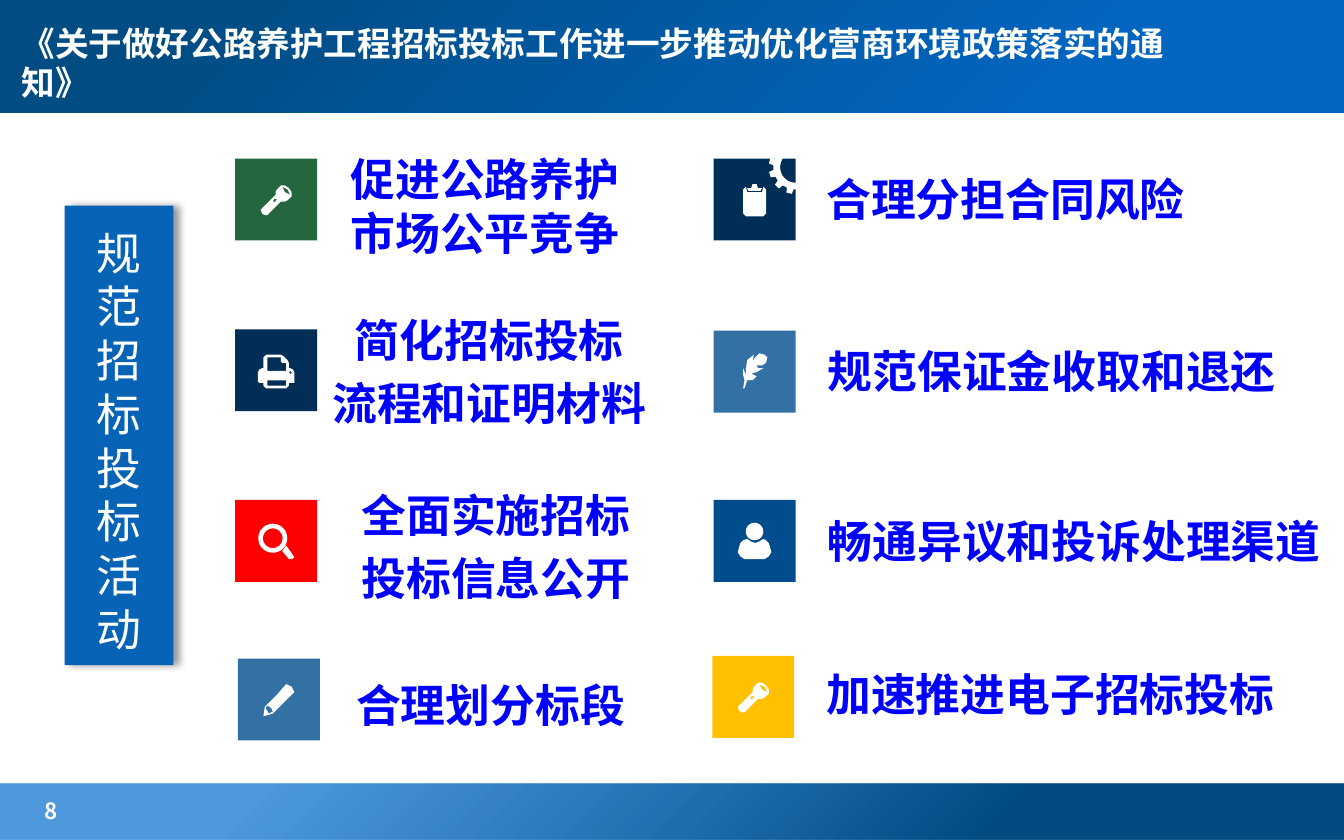
"""Build the slide on standardising tendering for road maintenance works."""
from math import cos, pi, sin

from lxml import etree
from pptx import Presentation
from pptx.dml.color import RGBColor
from pptx.enum.shapes import MSO_SHAPE
from pptx.enum.text import MSO_ANCHOR, PP_ALIGN
from pptx.oxml import parse_xml
from pptx.oxml.ns import qn
from pptx.util import Inches, Pt

RECT = MSO_SHAPE.RECTANGLE
LEFT, CENTER = PP_ALIGN.LEFT, PP_ALIGN.CENTER
TOP, MIDDLE = MSO_ANCHOR.TOP, MSO_ANCHOR.MIDDLE
NS = 'xmlns:a="http://schemas.openxmlformats.org/drawingml/2006/main"'
CJK = "Noto Sans CJK SC"


def paint(sp, color):
    sp.shadow.inherit = False
    sp.line.fill.background()
    sp.fill.solid()
    sp.fill.fore_color.rgb = RGBColor.from_string(color)


def write(sp, lines, size, font, color, bold=True, align=LEFT, anchor=TOP, pitch=None, inset=0.05):
    tf = sp.text_frame
    tf.word_wrap = True
    tf.vertical_anchor = anchor
    tf.margin_left = tf.margin_right = Inches(0.1)
    tf.margin_top, tf.margin_bottom = Inches(inset), Inches(0.05)
    for i, line in enumerate(lines):
        p = tf.add_paragraph() if i else tf.paragraphs[0]
        p.alignment = align
        p.space_before = Pt(size * 0.2 if i else 0)
        if pitch:
            p.line_spacing = Pt(pitch)
        r = p.add_run()
        r.text = line
        r.font.size, r.font.bold, r.font.name = Pt(size), bold, font
        r.font.color.rgb = RGBColor.from_string(color)
        etree.SubElement(r.font._element, qn("a:ea"), typeface=CJK)


prs = Presentation()
prs.slide_width, prs.slide_height = Inches(10), Inches(6.25)
s = prs.slides.add_slide(prs.slide_layouts[5])

bars = [
    (5.83, 0.42, [(26, "014C83", 100), (80, "026DCE", 70)]),
    (-0.03, 0.87, [(21, "0265BF", 100), (86, "014C83", 100)]),
]
for y, h, stops in bars:
    sp = s.shapes.add_shape(RECT, 0, Inches(y), prs.slide_width, Inches(h))
    paint(sp, stops[0][1])
    gs = "".join(
        f'<a:gs pos="{pos}000"><a:srgbClr val="{color}"><a:alpha val="{alpha}000"/></a:srgbClr></a:gs>'
        for pos, color, alpha in stops
    )
    solid = sp._element.spPr.find(qn("a:solidFill"))
    solid.getparent().replace(solid, parse_xml(
        f'<a:gradFill {NS} rotWithShape="1"><a:gsLst>{gs}</a:gsLst><a:path path="circle">'
        '<a:fillToRect l="100000" t="100000"/></a:path></a:gradFill>'
    ))

title = s.shapes.title
title._element.getparent().append(title._element)
title.left, title.top, title.width, title.height = Inches(0.06), Inches(0.12), Inches(9.17), Inches(0.64)
write(title, ["《关于做好公路养护工程招标投标工作进一步推动优化营商环境政策落实的通知》"], 18,
      "Times New Roman", "FFFFFF", anchor=MIDDLE, pitch=21, inset=0.11)

number = s.shapes.add_textbox(Inches(0.23), Inches(5.91), Inches(1.54), Inches(0.26))
write(number, ["8"], 12, CJK, "FFFFFF", inset=0.02)

label = s.shapes.add_shape(RECT, Inches(0.48), Inches(1.53), Inches(0.81), Inches(3.42))
paint(label, "0763B6")
label._element.spPr.find(qn("a:effectLst")).append(parse_xml(
    f'<a:outerShdw {NS} blurRad="50800" dist="38100" dir="0" algn="l" rotWithShape="0">'
    '<a:srgbClr val="000000"><a:alpha val="40000"/></a:srgbClr></a:outerShdw>'
))
write(label, ["规范招标投标活动"], 24, CJK, "FFFFFF", False, CENTER, MIDDLE, 28.8, 0.12)

# Icon outlines are in hundredths of an inch from the corner of their tile.
circle = [(cos(k * pi / 18), sin(k * pi / 18)) for k in range(36)]
ring = [[(28 + r * x, 28.5 + r * y) for x, y in circle] for r in (10.8, 7.3)]
head = [(30.5 + 6.5 * x, 23.5 + 6.5 * y) for x, y in circle]
gear_hole = [(61 + 11.5 * x, 6.5 + 11.5 * y) for x, y in circle]
gear_teeth = [
    (61 + r * cos((14 + 30 * k + turn) * pi / 180), 6.5 + r * sin((14 + 30 * k + turn) * pi / 180))
    for k in range(12) for turn, r in ((-9, 16.5), (-6, 20), (6, 20), (9, 16.5))
]
torch = [[
    [(40, 22), (37, 20), (34, 20), (31, 23), (30, 25), (30, 27), (19, 38), (20, 41), (22, 42),
     (24, 42), (34, 32), (37, 32), (39, 31), (42, 28), (42, 25)],
    [(37, 25), (35, 21), (39, 23), (41, 27)],
    [(28, 32), (29, 30), (31, 30), (30, 32)],
]]
printer = [[
    [(43, 30), (41, 29), (40, 29), (40, 25), (39, 23), (36, 20), (34, 19), (23, 19), (21, 21),
     (21, 29), (20, 29), (18, 30), (17, 32), (17, 39), (18, 40), (21, 40), (21, 42), (23, 44),
     (38, 44), (40, 42), (40, 40), (44, 40), (44, 32)],
    [(38, 31), (24, 31), (24, 21), (34, 21), (34, 24), (35, 25), (38, 25)],
    [(38, 42), (24, 42), (24, 38), (38, 38)],
    [(42, 33), (41, 33), (40, 32), (41, 31), (42, 32)],
]]
magnifier = [ring + [[(35, 38), (40, 44), (42, 44), (44, 43), (43, 41), (38, 34)]]]
pencil = [[
    [(40, 21), (36, 19), (29, 27), (20, 36), (19, 43), (26, 41), (34, 33), (42, 25)],
    [(25, 40), (23, 41), (22, 39), (21, 38), (21, 36), (22, 35), (25, 37), (26, 40)],
]]
clipboard = [
    [[(37, 21), (36, 25), (25, 25), (24, 21), (22, 23), (22, 41), (24, 43), (37, 43), (39, 41), (39, 23)]],
    [[(35, 24), (36, 22), (33, 22), (32, 19), (29, 19), (28, 22), (25, 22), (26, 24)]],
    [gear_teeth, gear_hole],
]
feather = [[
    [(23, 43), (25, 37), (29, 37), (32, 34), (28, 32), (32, 31), (37, 28), (33, 28), (32, 26),
     (36, 26), (39, 24), (40, 20), (38, 18), (34, 17), (31, 20), (29, 23), (30, 18), (25, 22),
     (24, 29), (24, 33), (22, 28), (22, 33), (23, 37), (22, 43)],
]]
person = [
    [head],
    [[(42, 35), (41, 32), (39, 30), (37, 29), (34, 31), (31, 32), (28, 31), (25, 29), (22, 30),
      (20, 32), (19, 35), (18, 39), (20, 42), (23, 44), (38, 44), (41, 42), (43, 39)]],
]

items = [
    (1.75, 1.18, "24673E", torch, 2.51, 1.05, 2.36, LEFT, ["促进公路养护市场公平竞争"]),
    (1.75, 2.45, "012E57", printer, 2.28, 2.25, 2.72, CENTER, ["简化招标投标", "流程和证明材料"]),
    (1.75, 3.72, "FF0000", magnifier, 2.33, 3.55, 2.72, CENTER, ["全面实施招标", "投标信息公开"]),
    (1.77, 4.9, "3371A4", pencil, 2.29, 4.96, 2.72, CENTER, ["合理划分标段"]),
    (5.31, 1.18, "012E57", clipboard, 6.05, 1.2, 3.15, LEFT, ["合理分担合同风险"]),
    (5.31, 2.46, "3371A4", feather, 6.06, 2.48, 3.74, LEFT, ["规范保证金收取和退还"]),
    (5.31, 3.72, "014C8D", person, 6.06, 3.74, 3.94, LEFT, ["畅通异议和投诉处理渠道"]),
    (5.3, 4.88, "FFC000", torch, 6.05, 4.88, 3.94, LEFT, ["加速推进电子招标投标"]),
]
for x, y, color, icon, text_x, text_y, text_w, align, lines in items:
    tile = s.shapes.add_shape(RECT, Inches(x), Inches(y), Inches(0.61), Inches(0.61))
    paint(tile, color)
    for outline in icon:
        fb = s.shapes.build_freeform(scale=Inches(1) / 1000)
        for contour in outline:
            points = [(10 * px, 10 * py) for px, py in contour]
            fb.move_to(*points[0])
            fb.add_line_segments(points[1:], close=True)
        paint(fb.convert_to_shape(Inches(x), Inches(y)), "FFFFFF")
    tb = s.shapes.add_textbox(Inches(text_x), Inches(text_y), Inches(text_w), Inches(0.64))
    write(tb, lines, 24, "Arial", "0000FF", align=align, pitch=28.8, inset=0.08)

prs.save("out.pptx")
